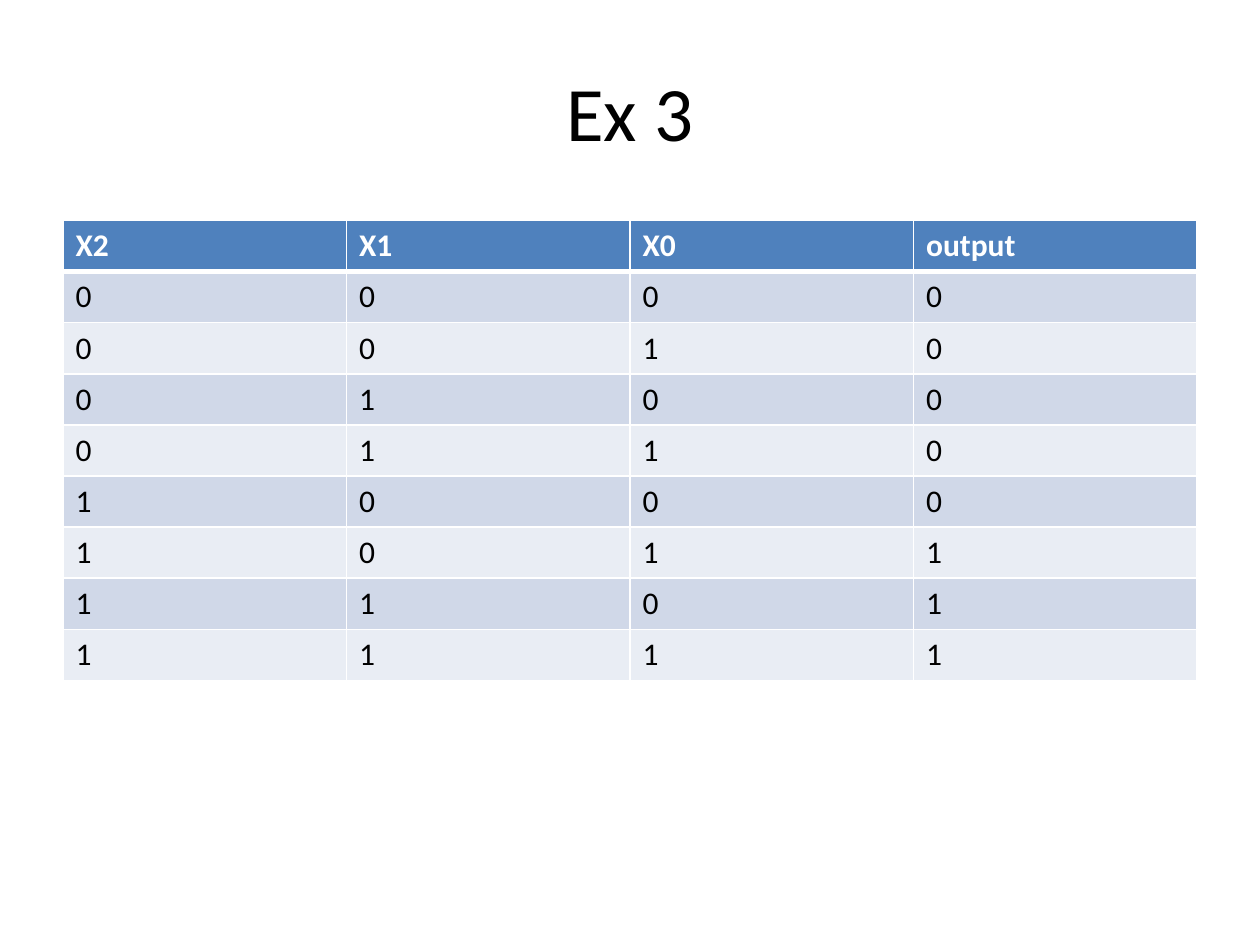
from dataclasses import dataclass
from itertools import product

from lxml.etree import SubElement
from pptx import Presentation
from pptx.dml.color import RGBColor
from pptx.enum.text import MSO_ANCHOR, PP_ALIGN
from pptx.oxml.ns import qn
from pptx.util import Inches, Pt


@dataclass(frozen=True)
class Theme:
    font: str = "Calibri"
    title_size: int = 44
    table_size: int = 18
    text: str = "000000"
    header_text: str = "FFFFFF"
    header_fill: str = "4F81BD"
    bands: tuple = ("D0D8E8", "E9EDF4")
    border: str = "FFFFFF"
    thin: int = 1
    thick: int = 3


class SlideBuilder:
    def __init__(self, s, theme):
        self.s = s
        self.theme = theme

    def style(self, p, size, color, bold=False):
        p.font.name = self.theme.font
        p.font.size = Pt(size)
        p.font.bold = bold
        p.font.color.rgb = RGBColor.from_string(color)

    def title(self, text, x, y, w, h):
        sp = self.s.shapes.add_textbox(Inches(x), Inches(y), Inches(w), Inches(h))
        tf = sp.text_frame
        tf.word_wrap = True
        tf.vertical_anchor = MSO_ANCHOR.MIDDLE
        p = tf.paragraphs[0]
        p.text = text
        p.alignment = PP_ALIGN.CENTER
        self.style(p, self.theme.title_size, self.theme.text)

    def borders(self, cell, top, bottom):
        """Draw all four cell borders; must run before the cell's fill is set."""
        tcPr = cell._tc.get_or_add_tcPr()
        thin = self.theme.thin
        for side, width in (("L", thin), ("R", thin), ("T", top), ("B", bottom)):
            ln = SubElement(tcPr, qn(f"a:ln{side}"), w=str(Pt(width)))
            fill = SubElement(ln, qn("a:solidFill"))
            SubElement(fill, qn("a:srgbClr"), val=self.theme.border)

    def table(self, rows, x, y, w, h):
        """Add a banded table whose first row is the header."""
        t = self.theme
        table = self.s.shapes.add_table(
            len(rows), len(rows[0]), Inches(x), Inches(y), Inches(w), Inches(h)
        ).table
        for i, values in enumerate(rows):
            header = i == 0
            fill = t.header_fill if header else t.bands[(i - 1) % 2]
            color = t.header_text if header else t.text
            top = t.thick if i == 1 else t.thin
            bottom = t.thick if header else t.thin
            for j, value in enumerate(values):
                cell = table.cell(i, j)
                self.borders(cell, top, bottom)
                cell.fill.solid()
                cell.fill.fore_color.rgb = RGBColor.from_string(fill)
                p = cell.text_frame.paragraphs[0]
                p.text = str(value)
                self.style(p, t.table_size, color, header)


def truth_table():
    rows = [("X2", "X1", "X0", "output")]
    for x2, x1, x0 in product((0, 1), repeat=3):
        rows.append((x2, x1, x0, x2 & (x1 | x0)))
    return rows


def main():
    prs = Presentation()
    prs.slide_width, prs.slide_height = Inches(10), Inches(7.5)
    s = prs.slides.add_slide(prs.slide_layouts[6])
    builder = SlideBuilder(s, Theme())
    builder.title("Ex 3", 0.5, 0.25, 9, 1.25)
    builder.table(truth_table(), 0.5, 1.75, 9, 3.65)
    prs.save("out.pptx")


if __name__ == "__main__":
    main()
